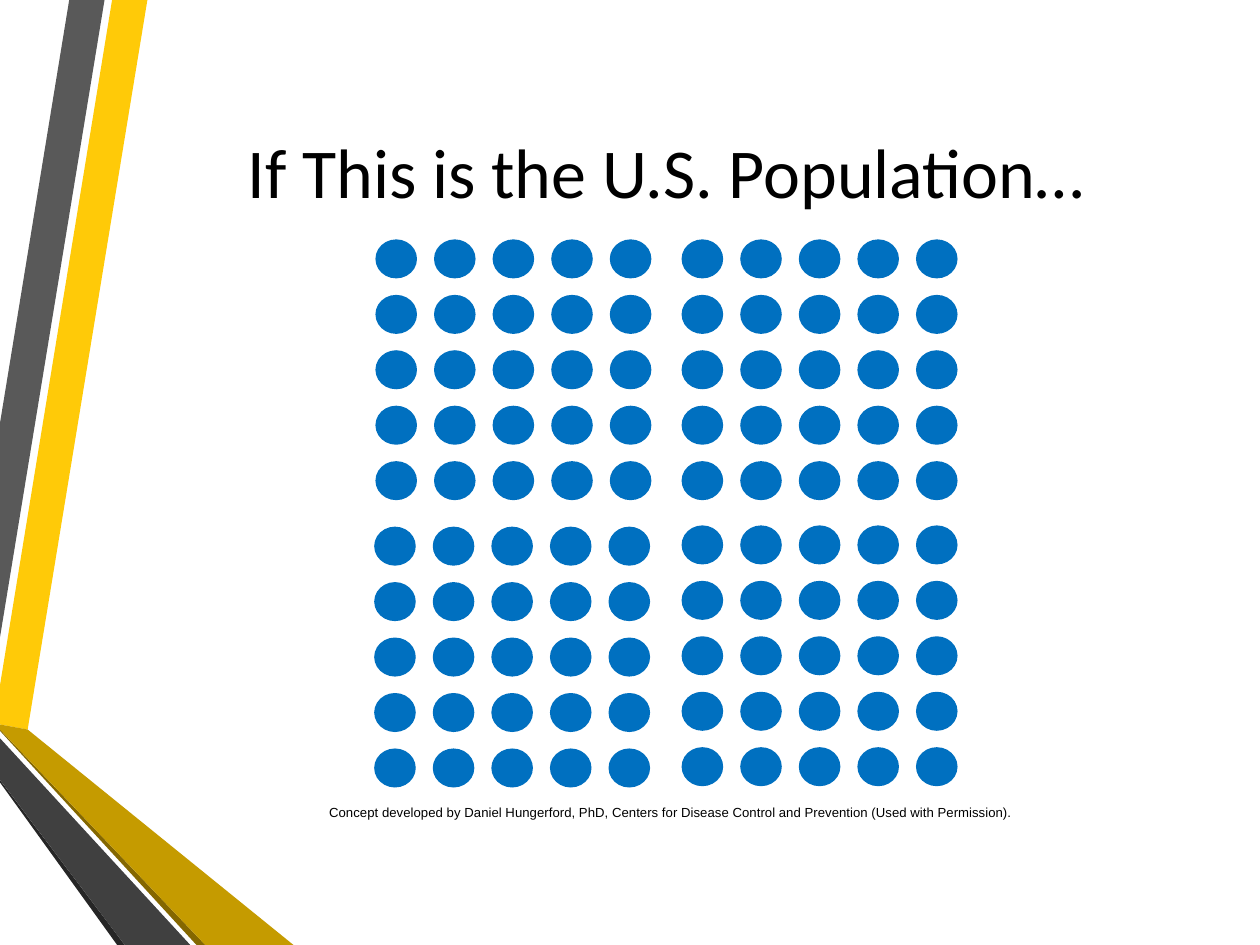
from pptx import Presentation
from pptx.dml.color import RGBColor
from pptx.enum.shapes import MSO_SHAPE
from pptx.enum.text import MSO_ANCHOR, MSO_AUTO_SIZE, PP_ALIGN
from pptx.util import Inches, Pt

OVAL = MSO_SHAPE.OVAL
MIDDLE = MSO_ANCHOR.MIDDLE
CENTER = PP_ALIGN.CENTER
NO_FIT = MSO_AUTO_SIZE.NONE


def paint(sp, color):
    sp.shadow.inherit = False
    sp.fill.solid()
    sp.fill.fore_color.rgb = RGBColor.from_string(color)
    sp.line.fill.background()


def write(sp, text, font):
    tf = sp.text_frame
    for name, value in {"word_wrap": True, "auto_size": NO_FIT, "vertical_anchor": MIDDLE}.items():
        setattr(tf, name, value)
    p = tf.paragraphs[0]
    p.alignment = CENTER
    r = p.add_run()
    r.text = text
    for name, value in font.items():
        setattr(r.font, name, value)
    r.font.color.rgb = RGBColor.from_string("000000")


prs = Presentation()
prs.slide_width, prs.slide_height = Inches(10), Inches(7.5)
s = prs.slides.add_slide(prs.slide_layouts[5])

# Ribbons along the left edge, back to front
ribbons = [
    ("FFCA08", [(0, 5.44), (0, 5.75), (0.22, 5.79), (1.17, 0), (0.89, 0)]),
    ("595959", [(0.83, 0), (0.55, 0), (0, 3.36), (0, 5.06)]),
    ("262626", [(0, 6.19), (0, 6.21), (0.93, 7.5), (0.99, 7.5)]),
    ("846700", [(0, 5.79), (0, 5.8), (1.56, 7.5), (1.63, 7.5)]),
    ("C59B00", [(0, 5.79), (1.63, 7.5), (2.33, 7.5), (0.22, 5.79), (0, 5.75)]),
    ("404040", [(0, 6.19), (0.99, 7.5), (1.51, 7.5), (0, 5.86)]),
]
for color, points in ribbons:
    corners = [(Inches(x), Inches(y)) for x, y in points]
    fb = s.shapes.build_freeform(*corners[0])
    fb.add_line_segments(corners[1:], close=True)
    paint(fb.convert_to_shape(), color)

# Title
title = s.shapes.title
title.left, title.top, title.width, title.height = map(Inches, (1.07, 0.5, 8.43, 1.7))
write(title, "If This is the U.S. Population…", {"size": Pt(40), "name": "Calibri"})

# One hundred people: four blocks of five by five dots
for left, top in [(5.41, 1.9), (5.41, 4.17), (2.98, 1.9), (2.97, 4.18)]:
    for row in range(5):
        for col in range(5):
            x, y = left + col * 0.465, top + row * 0.44
            dot = s.shapes.add_shape(OVAL, Inches(x), Inches(y), Inches(0.33), Inches(0.31))
            paint(dot, "0070C0")

# Credit
credit = s.shapes.add_textbox(Inches(2.42), Inches(6.33), Inches(5.8), Inches(0.23))
write(credit, "Concept developed by Daniel Hungerford, PhD, Centers for Disease Control "
      "and Prevention (Used with Permission).", {"size": Pt(7.5), "name": "Arial"})

prs.save("out.pptx")
